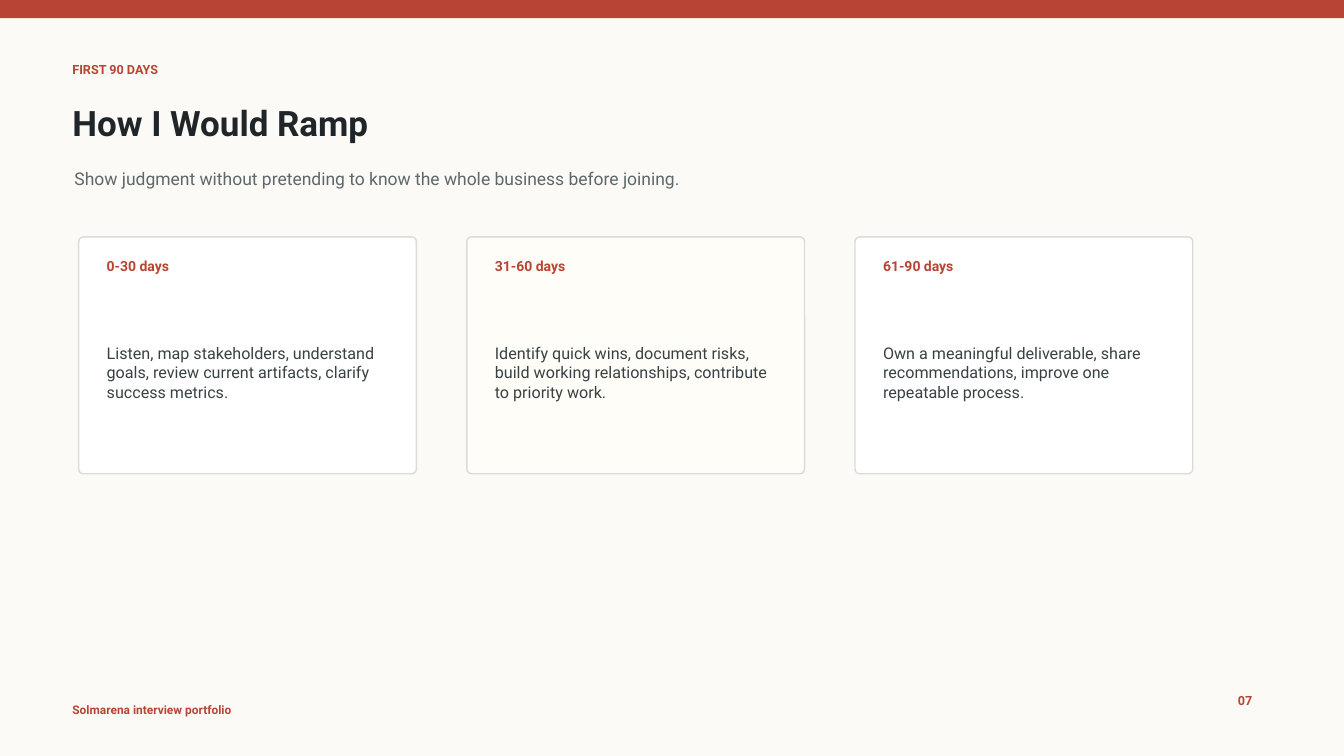
from pptx import Presentation
from pptx.dml.color import RGBColor
from pptx.enum.shapes import MSO_SHAPE as Shape
from pptx.enum.text import MSO_ANCHOR as Anchor
from pptx.util import Inches, Pt

PAPER = RGBColor(0xFB, 0xFA, 0xF6)
BRICK = RGBColor(0xB7, 0x44, 0x34)
INK = RGBColor(0x1F, 0x25, 0x28)
SLATE = RGBColor(0x5E, 0x68, 0x6B)
CHARCOAL = RGBColor(0x38, 0x41, 0x44)
BORDER = RGBColor(0xD8, 0xDD, 0xD7)
WHITE = RGBColor(0xFF, 0xFF, 0xFF)
CREAM = RGBColor(0xFF, 0xFD, 0xF8)

PAGE_WIDTH, PAGE_HEIGHT = 13.33, 7.5
CARD_LEFT, CARD_TOP, CARD_SIZE, CARD_GAP = 0.78, 2.35, (3.35, 2.35), 0.5
CARD_PADDING = 0.18

PHASES = [
    ("0-30 days", "Listen, map stakeholders, understand goals, "
     "review current artifacts, clarify success metrics.", WHITE),
    ("31-60 days", "Identify quick wins, document risks, build working "
     "relationships, contribute to priority work.", CREAM),
    ("61-90 days", "Own a meaningful deliverable, share recommendations, "
     "improve one repeatable process.", WHITE),
]


class SlideBuilder:
    font_name = "Roboto"

    def __init__(self, page):
        self.page = page
        background = page.background.fill
        background.solid()
        background.fore_color.rgb = PAPER

    def panel(self, kind, left, top, width, height, fill, border=None):
        """Add a filled shape, outlined only when a border colour is given."""
        shape = self.page.shapes.add_shape(
            kind, Inches(left), Inches(top), Inches(width), Inches(height))
        shape.shadow.inherit = False
        shape.fill.solid()
        shape.fill.fore_color.rgb = fill
        if border is None:
            shape.line.fill.background()
        else:
            shape.line.color.rgb = border
            shape.line.width = Pt(1)
        return shape

    def text(self, words, left, top, width, height, size, color=BRICK, bold=True):
        box = self.page.shapes.add_textbox(
            Inches(left), Inches(top), Inches(width), Inches(height))
        frame = box.text_frame
        frame.word_wrap = True
        frame.vertical_anchor = Anchor.MIDDLE
        para = frame.paragraphs[0]
        para.text = words
        para.font.name = self.font_name
        para.font.size = Pt(size)
        para.font.bold = bold
        para.font.color.rgb = color

    def card(self, left, heading, body, fill):
        width, height = CARD_SIZE
        frame = self.panel(Shape.ROUNDED_RECTANGLE, left, CARD_TOP,
                           width, height, fill, BORDER)
        frame.adjustments[0] = 0.02
        text_left = left + CARD_PADDING
        text_width = width - 2 * CARD_PADDING
        self.text(heading, text_left, CARD_TOP + 0.16, text_width, 0.25, 10)
        self.text(body, text_left, CARD_TOP + 0.48, text_width, 1.73, 11.5,
                  CHARCOAL, bold=False)


def main():
    deck = Presentation()
    deck.slide_width = Inches(PAGE_WIDTH)
    deck.slide_height = Inches(PAGE_HEIGHT)
    builder = SlideBuilder(deck.slides.add_slide(deck.slide_layouts[6]))

    builder.panel(Shape.RECTANGLE, 0, 0, PAGE_WIDTH, 0.18, BRICK)
    builder.text("Solmarena interview portfolio", 0.62, 6.94, 3, 0.2, 8.5)
    builder.text("07", 12.18, 6.82, 0.5, 0.25, 9)
    builder.text("FIRST 90 DAYS", 0.62, 0.58, 4.8, 0.22, 9)
    builder.text("How I Would Ramp", 0.62, 0.94, 9.8, 0.55, 25, INK)
    builder.text("Show judgment without pretending to know the whole business "
                 "before joining.", 0.64, 1.56, 10.8, 0.42, 12.5, SLATE, bold=False)

    for index, (heading, body, fill) in enumerate(PHASES):
        left = CARD_LEFT + index * (CARD_SIZE[0] + CARD_GAP)
        builder.card(left, heading, body, fill)

    deck.save("out.pptx")


if __name__ == "__main__":
    main()
